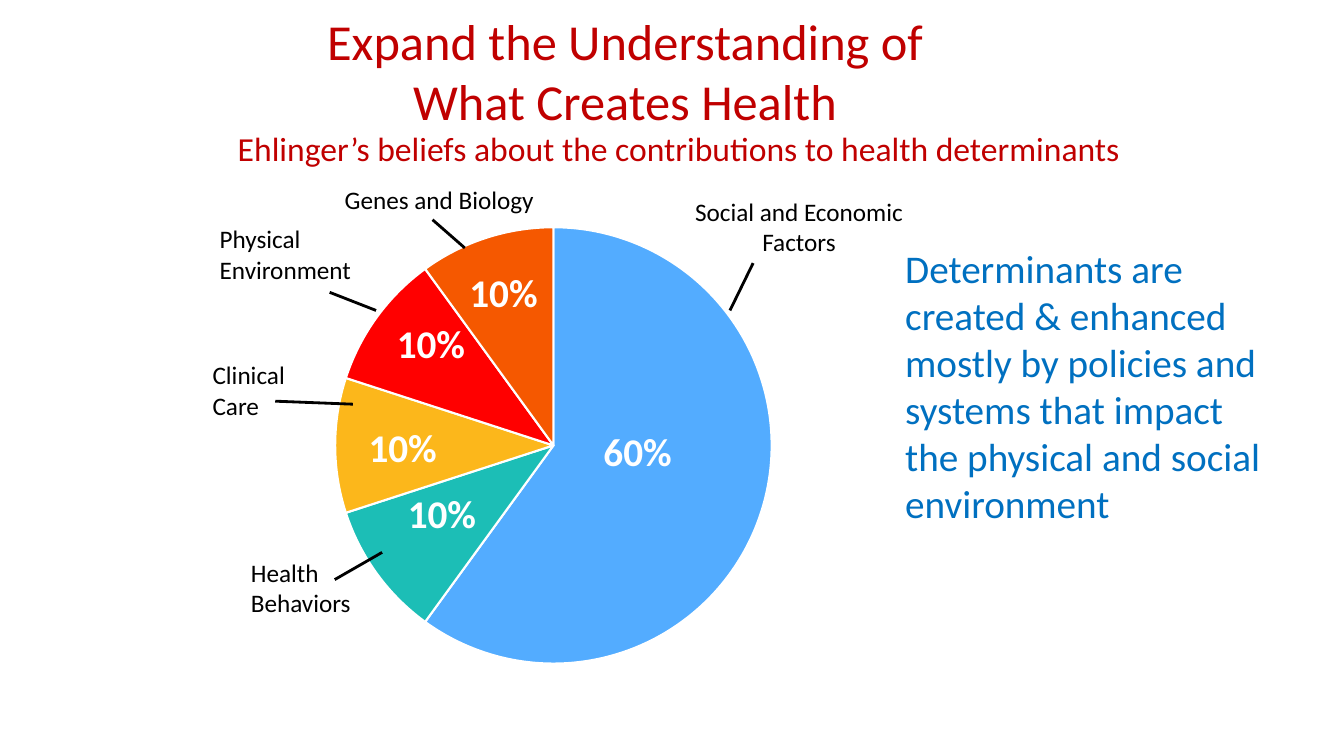
import dataclasses

import lxml.etree
import pptx
import pptx.chart.data
import pptx.dml.color
import pptx.enum.chart
import pptx.enum.shapes
import pptx.enum.text
import pptx.oxml
import pptx.oxml.ns
import pptx.util

Inches = pptx.util.Inches
Align = pptx.enum.text.PP_ALIGN
Anchor = pptx.enum.text.MSO_ANCHOR


@dataclasses.dataclass(frozen=True)
class Theme:
    font: str = "Calibri"
    heading: str = "C00000"
    message: str = "0070C0"
    ink: str = "000000"
    paper: str = "FFFFFF"
    slices: tuple = ("53ACFF", "1CBEB6", "FCB71B", "FF0000", "F55800")
    heading_size: int = 36
    value_size: int = 28
    title_size: int = 24
    label_size: int = 18
    chart_size: int = 10
    line_width: float = 2


def rgb(color):
    return pptx.dml.color.RGBColor.from_string(color)


class SlideBuilder:
    def __init__(self, deck, theme):
        self.theme = theme
        self.page = deck.slides.add_slide(deck.slide_layouts[5])
        self.page.background.fill.solid()
        self.page.background.fill.fore_color.rgb = rgb(theme.paper)

    def add_spans(self, para, text, size, color, bold=False):
        for number, line in enumerate(text.split("\n")):
            if number:
                para.add_line_break()
            span = para.add_run()
            span.text = line
            span.font.name = self.theme.font
            span.font.size = pptx.util.Pt(size)
            span.font.bold = bold
            span.font.color.rgb = rgb(color)

    def title(self, text, left, top, width, height):
        box = self.page.shapes.title
        box.left, box.top = Inches(left), Inches(top)
        box.width, box.height = Inches(width), Inches(height)
        frame = box.text_frame
        frame.word_wrap = True
        frame.auto_size = pptx.enum.text.MSO_AUTO_SIZE.NONE
        frame.vertical_anchor = Anchor.BOTTOM
        para = frame.paragraphs[0]
        para.alignment = Align.CENTER
        para.line_spacing = pptx.util.Pt(37.5)
        self.add_spans(para, text, self.theme.title_size, self.theme.heading)

    def text(self, text, left, top, width, height, size, color,
             align=Align.LEFT, bold=False, wrap=True):
        box = self.page.shapes.add_textbox(
            Inches(left), Inches(top), Inches(width), Inches(height))
        frame = box.text_frame
        frame.word_wrap = wrap
        para = frame.paragraphs[0]
        para.alignment = align
        self.add_spans(para, text, size, color, bold)

    def label(self, text, left, top, width, height, align=Align.LEFT):
        self.text(text, left, top, width, height,
                  self.theme.label_size, self.theme.ink, align)

    def value(self, text, left, top):
        self.text(text, left, top, 0.89, 0.57, self.theme.value_size,
                  self.theme.paper, Align.RIGHT, bold=True, wrap=False)

    def leader(self, x1, y1, x2, y2):
        line = self.page.shapes.add_connector(
            pptx.enum.shapes.MSO_CONNECTOR.STRAIGHT,
            Inches(x1), Inches(y1), Inches(x2), Inches(y2))
        line.line.color.rgb = rgb(self.theme.ink)
        line.line.width = pptx.util.Pt(self.theme.line_width)
        properties = line._element.spPr
        lxml.etree.SubElement(properties, pptx.oxml.ns.qn("a:effectLst"))

    def pie(self, values, left, top, width, height, diameter):
        data = pptx.chart.data.CategoryChartData()
        data.categories = [str(number + 1) for number in range(len(values))]
        data.add_series("Series 1", values)
        chart = self.page.shapes.add_chart(
            pptx.enum.chart.XL_CHART_TYPE.PIE, Inches(left), Inches(top),
            Inches(width), Inches(height), data).chart
        chart.has_legend = False
        chart.has_title = False
        chart.font.name = self.theme.font
        chart.font.size = pptx.util.Pt(self.theme.chart_size)
        chart.font.color.rgb = rgb(self.theme.ink)
        plot = chart.plots[0]
        plot.vary_by_categories = True
        for number, color in enumerate(self.theme.slices):
            point = plot.series[0].points[number].format
            point.fill.solid()
            point.fill.fore_color.rgb = rgb(color)
            point.line.color.rgb = rgb(self.theme.paper)
            point.line.width = pptx.util.Pt(1.5)
        self.fit_plot(chart, diameter / width, diameter / height)

    def fit_plot(self, chart, share_x, share_y):
        area = chart._chartSpace.chart.plotArea
        for layout in area.findall(pptx.oxml.ns.qn("c:layout")):
            area.remove(layout)
        area.insert(0, pptx.oxml.parse_xml(
            f'<c:layout {pptx.oxml.ns.nsdecls("c")}><c:manualLayout>'
            '<c:layoutTarget val="inner"/>'
            '<c:xMode val="edge"/><c:yMode val="edge"/>'
            f'<c:x val="{(1 - share_x) / 2:.4f}"/>'
            f'<c:y val="{(1 - share_y) / 2:.4f}"/>'
            f'<c:w val="{share_x:.4f}"/><c:h val="{share_y:.4f}"/>'
            '</c:manualLayout></c:layout>'))


def main():
    deck = pptx.Presentation()
    deck.slide_width, deck.slide_height = Inches(13.33), Inches(7.5)
    theme = Theme()
    slide = SlideBuilder(deck, theme)

    slide.title("Ehlinger’s beliefs about the contributions to health determinants ",
                2.21, 1.19, 9.12, 0.53)
    slide.pie((60, 10, 10, 10, 10), 1.3, 2.11, 8.38, 4.62, diameter=4.33)

    slide.label("Genes and Biology", 3.32, 1.78, 2.78, 0.4)
    slide.label("Physical Environment", 2.08, 2.17, 1.65, 0.71)
    slide.label("Clinical\nCare", 2.01, 3.52, 1.65, 0.71)
    slide.label("Health \nBehaviors", 2.39, 5.48, 2.06, 0.71)
    slide.label("Social and Economic\nFactors", 6.77, 1.9, 2.31, 0.71, Align.CENTER)

    for ends in ((4.29, 2.18, 4.61, 2.46), (3.27, 2.9, 3.73, 3.08),
                 (2.73, 3.98, 3.5, 4.01), (3.32, 5.75, 3.79, 5.48),
                 (7.24, 3.08, 7.47, 2.61)):
        slide.leader(*ends)

    for text, left, top in (("10%", 3.82, 3.12), ("10%", 4.54, 2.61),
                            ("10%", 3.54, 4.15), ("10%", 3.93, 4.81),
                            ("60%", 5.87, 4.19)):
        slide.value(text, left, top)

    slide.text("Determinants are created & enhanced mostly by policies and "
               "systems that impact the physical and social environment",
               8.88, 2.37, 3.76, 4.37, theme.value_size, theme.message)
    slide.text("Expand the Understanding of\nWhat Creates Health",
               1.94, 0.05, 8.52, 1.17, theme.heading_size, theme.heading,
               Align.CENTER)

    deck.save("out.pptx")


if __name__ == "__main__":
    main()
